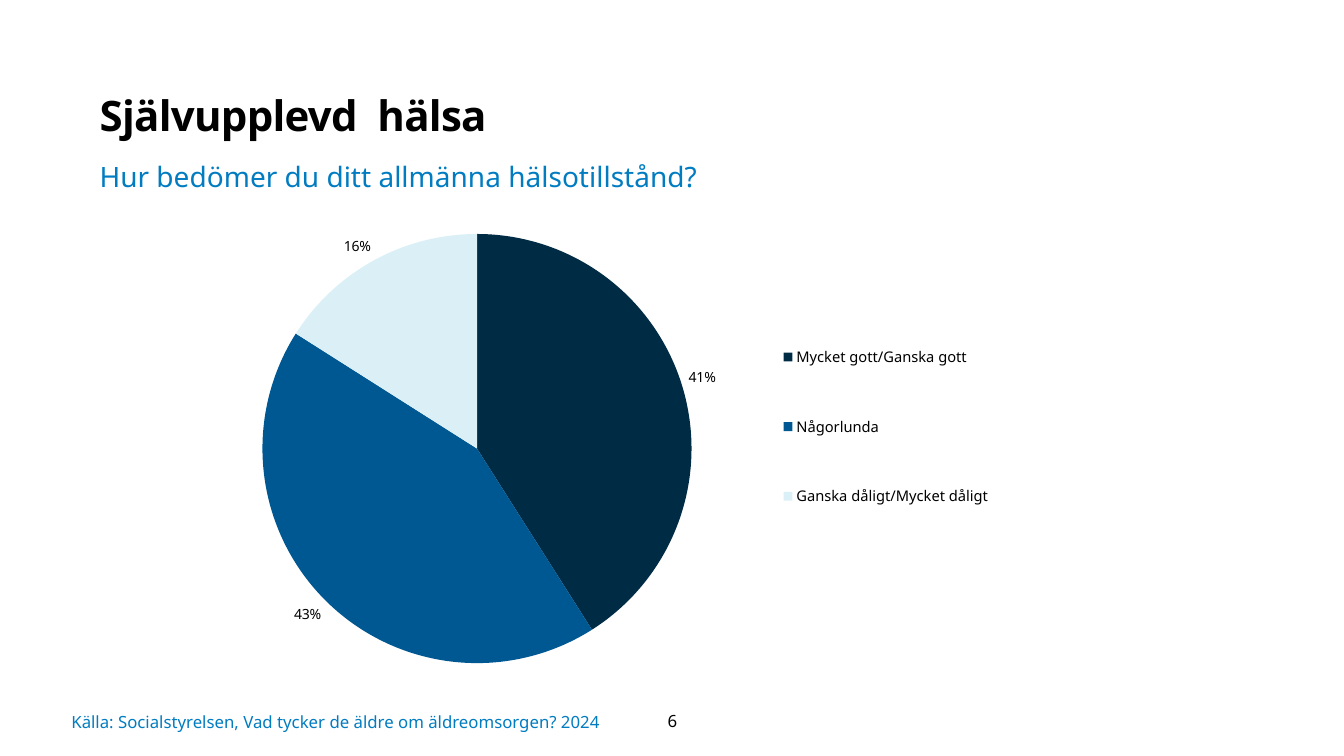
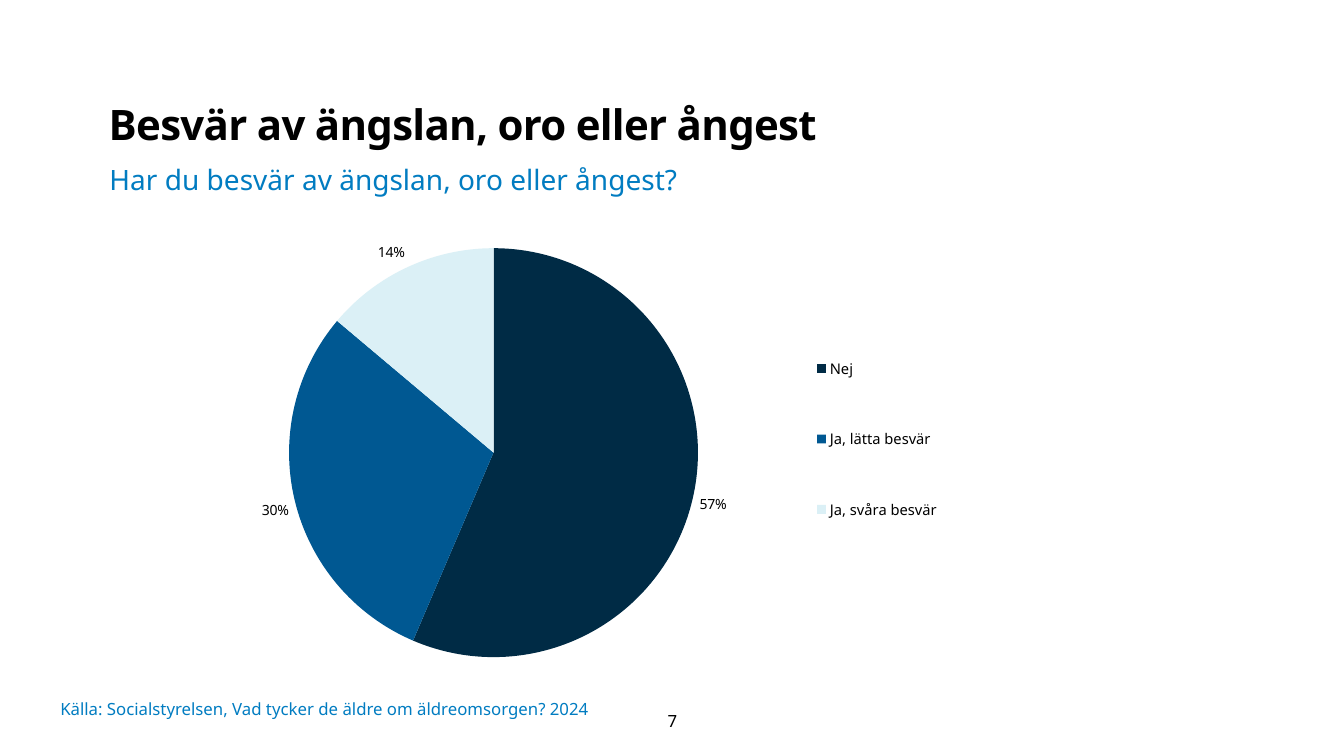
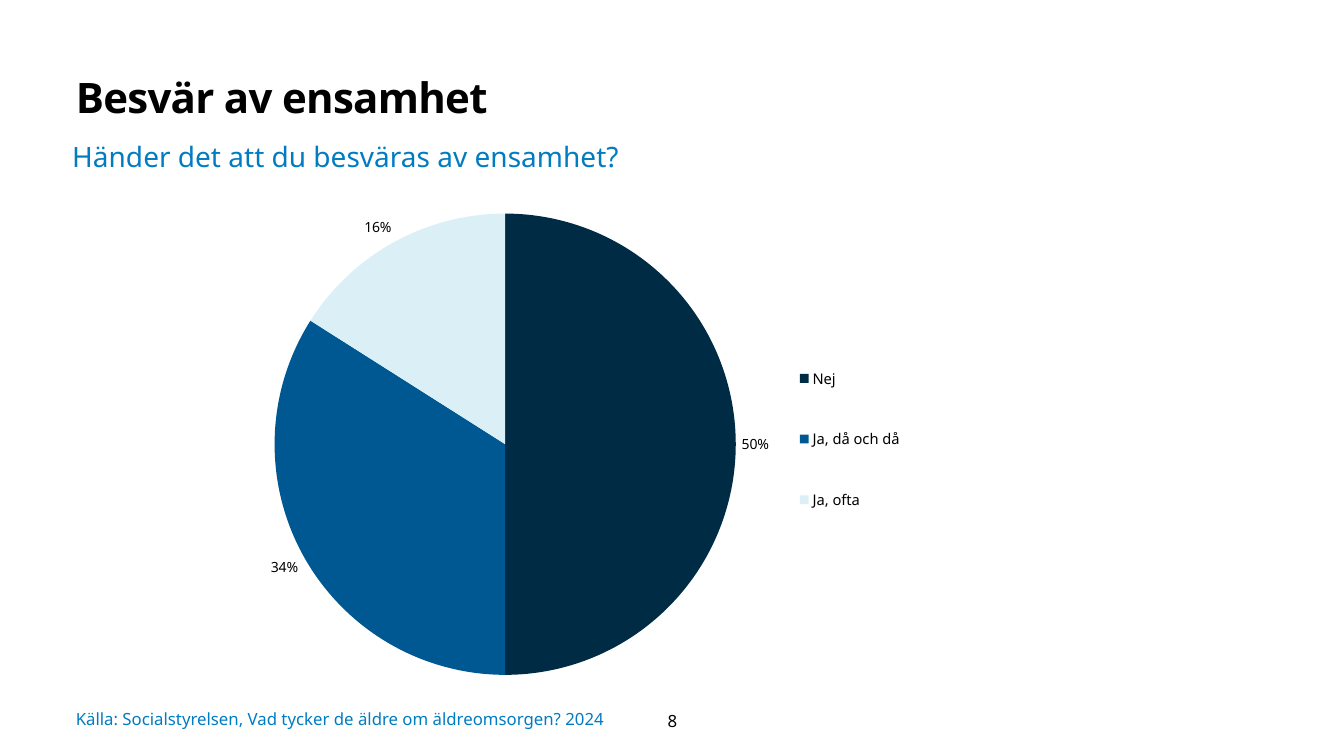
"""Builds three pie chart slides on self-rated health, anxiety and loneliness."""
from lxml import etree
from pptx import Presentation
from pptx.chart.data import CategoryChartData
from pptx.dml.color import RGBColor
from pptx.enum.chart import XL_CHART_TYPE, XL_LABEL_POSITION, XL_LEGEND_POSITION
from pptx.enum.text import MSO_ANCHOR, MSO_AUTO_SIZE, PP_ALIGN
from pptx.oxml.ns import qn
from pptx.util import Cm, Pt

PIE = XL_CHART_TYPE.PIE
OUTSIDE = XL_LABEL_POSITION.OUTSIDE_END
LEGEND_RIGHT = XL_LEGEND_POSITION.RIGHT
TOP, MIDDLE = MSO_ANCHOR.TOP, MSO_ANCHOR.MIDDLE
LEFT, CENTER = PP_ALIGN.LEFT, PP_ALIGN.CENTER
FIXED = MSO_AUTO_SIZE.NONE

FONT = "Noto Sans"
COLORS = {"text": "000000", "accent": "017CC1", "background": "FFFFFF"}
SLICES = {"navy": "002B45", "blue": "005892", "ice": "DBF0F6"}
SOURCE = "Källa: Socialstyrelsen, Vad tycker de äldre om äldreomsorgen? 2024"
NUMBER_BOX = (15.65, 17.65, 2.59, 1.02)
DEFAULT_INSETS = (0.25, 0.13, 0.25, 0.13)
NO_INSETS = (0, 0, 0, 0)
TITLE_INSETS = (0, 0, 0.25, 0.13)
TITLE_ONLY = 5

PAGES = [
    {
        "number": 6,
        "title": ("Självupplevd  hälsa", (2.51, 2.13, 24.97, 1.73)),
        "question": ("Hur bedömer du ditt allmänna hälsotillstånd?", (2.26, 3.89, 20.02, 1.12)),
        "answers": {"Mycket gott/Ganska gott": 41, "Någorlunda": 43, "Ganska dåligt/Mycket dåligt": 16},
        "chart_box": (5.26, 5.16, 22.17, 12.29),
        "plot": (0.06, 0.06, 0.49, 0.88),
        "legend": (0.64, 0.19, 0.26, 0.53),
        "source_box": (1.8, 17.65, 13.84, 1.07),
    },
    {
        "number": 7,
        "title": ("Besvär av ängslan, oro eller ångest", (2.74, 2.36, 24.74, 1.57)),
        "question": ("Har du besvär av ängslan, oro eller ångest?", (2.51, 3.96, 22.76, 1.12)),
        "answers": {"Nej": 57, "Ja, lätta besvär": 30, "Ja, svåra besvär": 14},
        "chart_box": (3.81, 5.56, 23.01, 11.58),
        "plot": (0.15, 0.06, 0.45, 0.89),
        "legend": (0.72, 0.19, 0.15, 0.57),
        "source_box": (1.52, 17.15, 23.55, 1.4),
    },
    {
        "number": 8,
        "title": ("Besvär av ensamhet", (1.91, 1.68, 27, 1.7)),
        "question": ("Händer det att du besväras av ensamhet?", (1.57, 3.38, 26.19, 1.12)),
        "answers": {"Nej": 50, "Ja, då och då": 34, "Ja, ofta": 16},
        "chart_box": (5.33, 4.6, 19.74, 13.06),
        "plot": (0.08, 0.06, 0.59, 0.89),
        "legend": (0.74, 0.28, 0.15, 0.43),
        "source_box": (1.91, 17.75, 15.01, 0.74),
    },
]


def rgb(name):
    return RGBColor.from_string(COLORS[name])


def place_in_chart(part, index, fractions, inner=False):
    for old in part.findall(qn("c:layout")):
        part.remove(old)
    layout = etree.Element(qn("c:layout"))
    manual = etree.SubElement(layout, qn("c:manualLayout"))
    settings = [("layoutTarget", "inner")] if inner else []
    settings += [("xMode", "edge"), ("yMode", "edge"), *zip("xywh", fractions)]
    for tag, value in settings:
        etree.SubElement(manual, qn(f"c:{tag}")).set("val", str(value))
    part.insert(index, layout)


class Deck:
    def __init__(self):
        self.prs = Presentation()
        self.prs.slide_width, self.prs.slide_height = Cm(33.87), Cm(19.05)
        self.slide = None

    def new_slide(self):
        self.slide = self.prs.slides.add_slide(self.prs.slide_layouts[TITLE_ONLY])
        background = self.slide.background.fill
        background.solid()
        background.fore_color.rgb = rgb("background")

    def set_text(self, shape, text, size, color, insets, anchor=TOP, align=LEFT):
        frame = shape.text_frame
        frame.word_wrap = True
        frame.auto_size = FIXED
        frame.vertical_anchor = anchor
        frame.margin_left, frame.margin_top, frame.margin_right, frame.margin_bottom = map(Cm, insets)
        frame.text = text
        paragraph = frame.paragraphs[0]
        paragraph.alignment = align
        paragraph.font.name = FONT
        paragraph.font.size = Pt(size)
        paragraph.font.color.rgb = rgb(color)
        return paragraph

    def title(self, text, box):
        heading = self.slide.shapes.title
        heading.left, heading.top, heading.width, heading.height = map(Cm, box)
        paragraph = self.set_text(heading, text, 30, "text", TITLE_INSETS)
        paragraph.font.bold = True
        paragraph.line_spacing = 1.1
        paragraph.runs[0]._r.get_or_add_rPr().set("spc", "-50")

    def label(self, text, box, size, color, insets=DEFAULT_INSETS, anchor=TOP, align=LEFT):
        shape = self.slide.shapes.add_textbox(*map(Cm, box))
        self.set_text(shape, text, size, color, insets, anchor, align)

    def pie(self, answers, box, plot_area, legend_area):
        data = CategoryChartData()
        data.categories = list(answers)
        data.add_series("Series 1", list(answers.values()))
        chart = self.slide.shapes.add_chart(PIE, *map(Cm, box), data).chart
        chart.has_title = False
        chart.font.name = FONT
        chart.font.size = Pt(10)
        chart.font.color.rgb = rgb("text")

        plot = chart.plots[0]
        plot.vary_by_categories = True
        for index, color in enumerate(SLICES.values()):
            piece = plot.series[0].points[index].format
            piece.fill.solid()
            piece.fill.fore_color.rgb = RGBColor.from_string(color)
            piece.line.fill.background()

        plot.has_data_labels = True
        shares = plot.data_labels
        shares.show_value = True
        shares.show_percentage = False
        shares.number_format = '0"%"'
        shares.number_format_is_linked = False
        shares.position = OUTSIDE

        chart.has_legend = True
        legend = chart.legend
        legend.position = LEGEND_RIGHT
        legend.include_in_layout = False
        legend.font.name = FONT
        legend.font.size = Pt(10.5)
        legend.font.color.rgb = rgb("text")

        root = chart.element if hasattr(chart, "element") else chart._chartSpace
        place_in_chart(root.find(f".//{qn('c:plotArea')}"), 0, plot_area, inner=True)
        place_in_chart(root.find(f".//{qn('c:legend')}"), 1, legend_area)


def main():
    deck = Deck()
    for page in PAGES:
        deck.new_slide()
        deck.title(*page["title"])
        deck.label(*page["question"], 20, "accent")
        deck.pie(page["answers"], page["chart_box"], page["plot"], page["legend"])
        deck.label(SOURCE, page["source_box"], 12, "accent", NO_INSETS, MIDDLE)
        deck.label(str(page["number"]), NUMBER_BOX, 12, "text", anchor=MIDDLE, align=CENTER)
    deck.prs.save("out.pptx")


if __name__ == "__main__":
    main()
